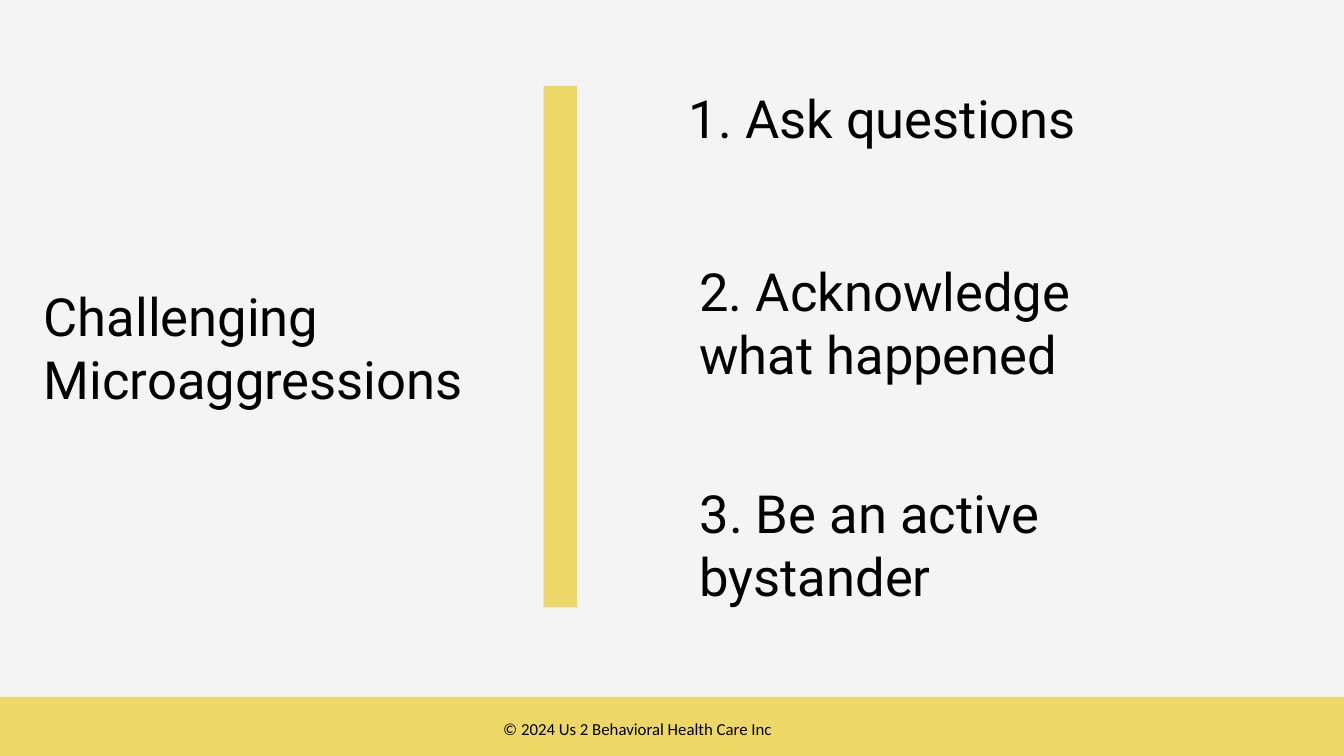
from pptx import Presentation
from pptx.dml.color import RGBColor
from pptx.enum.shapes import MSO_SHAPE as Shape
from pptx.enum.text import MSO_AUTO_SIZE as AutoSize
from pptx.util import Inches, Pt

COLORS = {"background": "F4F4F4", "accent": "EDD767", "text": "000000"}
HEADING = {"font": "Roboto", "size": 56.3, "line_spacing": 67.6}
FOOTER = {"font": "Calibri", "size": 18}


def write_text(frame, text, font, size, line_spacing=None, indent=0):
    paragraph = frame.paragraphs[0]
    if indent:
        properties = paragraph._p.get_or_add_pPr()
        properties.set("marL", str(Inches(indent)))
        properties.set("indent", "0")
    if line_spacing:
        paragraph.line_spacing = Pt(line_spacing)
    run = paragraph.add_run()
    run.text = text
    run.font.name = font
    run.font.size = Pt(size)
    run.font.color.rgb = RGBColor.from_string(COLORS["text"])


class SlideBuilder:
    def __init__(self, slide):
        self.slide = slide

    def background(self, color):
        fill = self.slide.background.fill
        fill.solid()
        fill.fore_color.rgb = RGBColor.from_string(COLORS[color])

    def bar(self, box, color):
        shape = self.slide.shapes.add_shape(Shape.RECTANGLE, *map(Inches, box))
        shape.shadow.inherit = False
        shape.fill.solid()
        shape.fill.fore_color.rgb = RGBColor.from_string(COLORS[color])
        shape.line.fill.background()

    def text(self, text, box, margins=(0, 0), **style):
        frame = self.slide.shapes.add_textbox(*map(Inches, box)).text_frame
        frame.word_wrap = True
        frame.auto_size = AutoSize.SHAPE_TO_FIT_TEXT
        frame.margin_left = frame.margin_right = Inches(margins[0])
        frame.margin_top = frame.margin_bottom = Inches(margins[1])
        write_text(frame, text, **style)


def main():
    presentation = Presentation()
    presentation.slide_width = Inches(20)
    presentation.slide_height = Inches(11.25)
    builder = SlideBuilder(presentation.slides.add_slide(presentation.slide_layouts[6]))

    builder.background("background")
    builder.text("Challenging Microaggressions", (0.65, 4.22, 6.44, 1.88), **HEADING)
    builder.bar((8.09, 1.28, 0.5, 7.76), "accent")

    steps = [
        ("1. Ask questions", (9.58, 1.28, 6.44, 0.94), 0.67),
        ("2. Acknowledge what happened", (10.41, 3.85, 6.44, 1.88), 0),
        ("3. Be an active bystander", (10.41, 7.16, 7.91, 1.88), 0),
    ]
    for step, box, indent in steps:
        builder.text(step, box, indent=indent, **HEADING)

    builder.bar((0, 10.37, 20, 0.88), "accent")
    builder.text("© 2024 Us 2 Behavioral Health Care Inc", (7.39, 10.65, 4.75, 0.71),
                 margins=(0.1, 0.05), **FOOTER)

    presentation.save("out.pptx")


if __name__ == "__main__":
    main()
